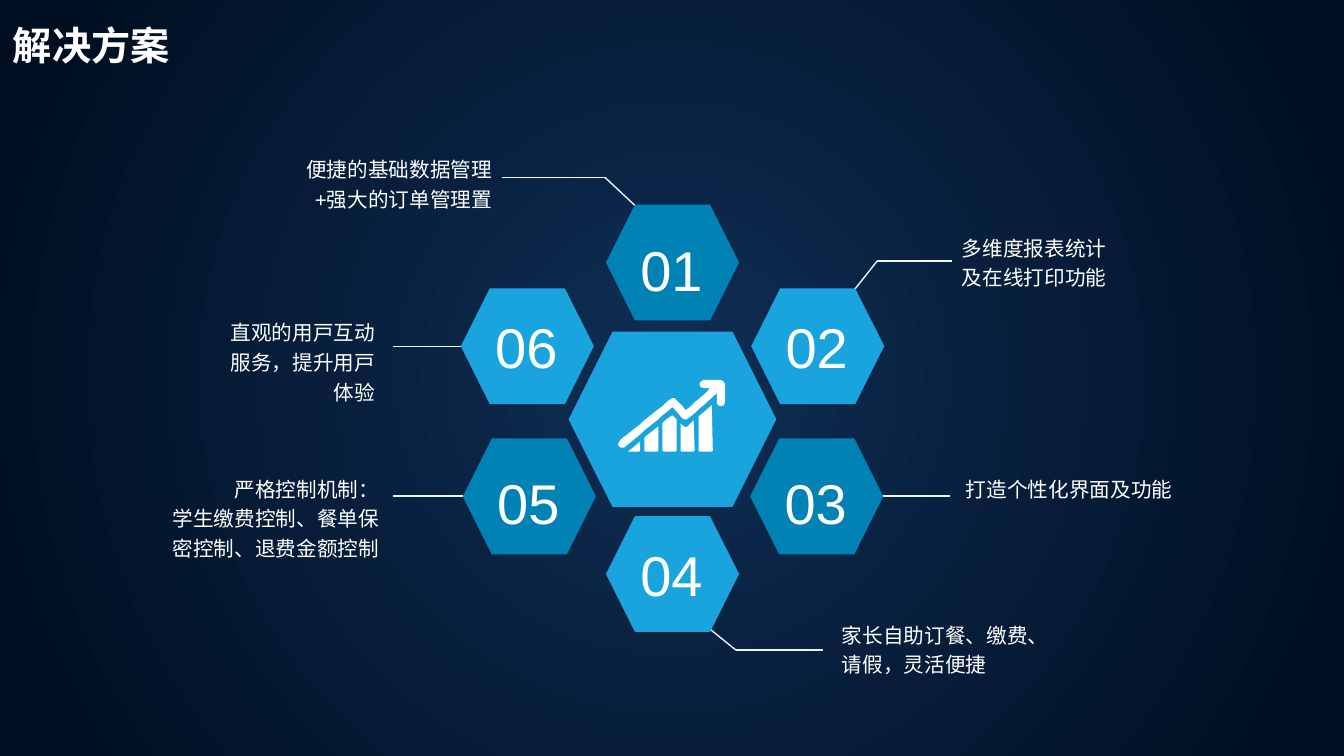
from dataclasses import dataclass
from itertools import pairwise

from lxml.etree import SubElement
from pptx import Presentation
from pptx.dml.color import RGBColor
from pptx.enum.shapes import MSO_CONNECTOR, MSO_SHAPE
from pptx.enum.text import MSO_AUTO_SIZE, PP_ALIGN
from pptx.oxml.ns import qn
from pptx.util import Inches, Pt

COLOURS = {
    "glow": "0F2E55",
    "night": "000E21",
    "light": "1AA4DE",
    "deep": "0082B4",
    "white": "FFFFFF",
    "leader": "F2F2F2",
}
FONT = "Arial"
HEXAGON_WIDTH, HEXAGON_HEIGHT = 1.32, 1.15
UNITS_PER_INCH = 100
BAR_WIDTH, BAR_BASE = 14, 448

Point = tuple[float, float]


@dataclass(frozen=True)
class Step:
    number: int
    left: float
    top: float
    leader: tuple[Point, ...]


@dataclass(frozen=True)
class Label:
    left: float
    top: float
    width: float
    height: float
    paragraphs: tuple[str, ...]
    align: PP_ALIGN = PP_ALIGN.LEFT
    size: float = 14.7
    spacing: float = 1.2
    bold: bool = False
    grows: bool = True


@dataclass(frozen=True)
class Bar:
    left: int
    top_edge: tuple[tuple[int, int], ...]


STEPS = (
    Step(1, 6.01, 2.03, ((6.31, 2.05), (6, 1.76), (4.98, 1.76))),
    Step(2, 7.45, 2.86, ((8.47, 2.88), (8.7, 2.59), (9.44, 2.59))),
    Step(3, 7.44, 4.35, ((8.75, 4.92), (9.42, 4.92))),
    Step(4, 6.01, 5.12, ((7.04, 6.24), (7.3, 6.45), (8.16, 6.45))),
    Step(5, 4.59, 4.35, ((4.59, 4.92), (3.9, 4.92))),
    Step(6, 4.57, 2.86, ((4.57, 3.44), (3.9, 3.44))),
)

LABELS = (
    Label(2.67, 1.46, 2.31, 0.69, ("便捷的基础数据管理+强大的订单管理置",), PP_ALIGN.RIGHT),
    Label(9.44, 2.24, 2.41, 0.69, ("多维度报表统计", "及在线打印功能")),
    Label(9.48, 4.63, 2.41, 0.4, ("打造个性化界面及功能",)),
    Label(8.25, 6.08, 2.13, 0.69, ("家长自助订餐、缴费、请假，灵活便捷",)),
    Label(1.5, 4.63, 2.36, 1.06,
          ("严格控制机制：", "学生缴费控制、餐单保密控制、退费金额控制"),
          PP_ALIGN.RIGHT, grows=False),
    Label(2.03, 3.08, 1.79, 0.99, ("直观的用戸互动服务，提升用戸体验",), PP_ALIGN.RIGHT),
    Label(0.03, 0.16, 2.63, 0.57, ("解决方案",), PP_ALIGN.JUSTIFY, 28, 1, True),
)

BARS = (
    Bar(639, ((639, 434), (653, 423))),
    Bar(657, ((657, 420), (661, 416), (667, 412), (671, 416))),
    Bar(675, ((675, 420), (677, 422), (680, 424), (682, 423), (688, 417))),
    Bar(693, ((693, 413), (698, 409), (706, 402))),
)
FIRST_WEDGE = ((635, 438), (623, 448), (634, 448), (635, 447))
TREND_ARROW = (
    (719, 381), (718, 379), (717, 378), (715, 377), (698, 377), (696, 378),
    (694, 380), (694, 382), (695, 384), (698, 385), (704, 385), (701, 389),
    (693, 396), (689, 399), (684, 404), (680, 407), (677, 403), (671, 397),
    (669, 395), (667, 395), (665, 396), (661, 399), (657, 403), (653, 406),
    (639, 417), (635, 421), (617, 435), (615, 437), (614, 439), (613, 441),
    (614, 443), (616, 444), (618, 444), (619, 444), (635, 431), (639, 427),
    (653, 416), (657, 412), (661, 409), (667, 404), (671, 408), (675, 413),
    (677, 415), (679, 416), (681, 416), (684, 414), (689, 410), (693, 406),
    (699, 401), (711, 390), (711, 399), (712, 402), (715, 403), (718, 402),
    (719, 399),
)


def colour(name: str) -> RGBColor:
    return RGBColor.from_string(COLOURS[name])


def paint(shape, fill: str) -> None:
    shape.shadow.inherit = False
    shape.fill.solid()
    shape.fill.fore_color.rgb = colour(fill)
    shape.line.fill.background()


def paint_background(slide) -> None:
    fill = slide.background.fill
    fill.gradient()
    for stop, name, position in zip(fill.gradient_stops, ("glow", "night"), (0, 0.94)):
        stop.color.rgb = colour(name)
        stop.position = position
    gradient = slide.element.xpath(".//a:gradFill")[0]
    gradient.remove(gradient.find(qn("a:lin")))
    circle = SubElement(gradient, qn("a:path"), {"path": "circle"})
    centre = {side: "50000" for side in ("l", "t", "r", "b")}
    SubElement(circle, qn("a:fillToRect"), centre)


def add_hexagon(slide, left: float, top: float, width: float, height: float, fill: str) -> None:
    hexagon = slide.shapes.add_shape(
        MSO_SHAPE.HEXAGON, Inches(left), Inches(top), Inches(width), Inches(height))
    paint(hexagon, fill)


def add_leader(slide, points: tuple[Point, ...]) -> None:
    for start, end in pairwise(points):
        segment = slide.shapes.add_connector(
            MSO_CONNECTOR.STRAIGHT, *(Inches(value) for value in start + end))
        segment.line.color.rgb = colour("leader")
        segment.line.width = Pt(1)
        SubElement(segment.element.spPr, qn("a:effectLst"))


def add_label(slide, label: Label) -> None:
    frame = slide.shapes.add_textbox(
        Inches(label.left), Inches(label.top), Inches(label.width), Inches(label.height)
    ).text_frame
    frame.word_wrap = True
    frame.auto_size = MSO_AUTO_SIZE.SHAPE_TO_FIT_TEXT if label.grows else MSO_AUTO_SIZE.NONE
    for index, words in enumerate(label.paragraphs):
        paragraph = frame.add_paragraph() if index else frame.paragraphs[0]
        paragraph.alignment = label.align
        paragraph.line_spacing = float(label.spacing)
        run = paragraph.add_run()
        run.text = words
        run.font.name = FONT
        run.font.size = Pt(label.size)
        run.font.bold = label.bold
        run.font.color.rgb = colour("white")


def add_step(slide, step: Step) -> None:
    odd = step.number % 2 == 1
    add_leader(slide, step.leader)
    add_hexagon(slide, step.left, step.top, HEXAGON_WIDTH, HEXAGON_HEIGHT,
                "deep" if odd else "light")
    add_label(slide, Label(
        step.left + 0.2, step.top + (0.12 if odd else 0.19), 0.9, 0.84 if odd else 0.77,
        (f"{step.number:02}",), PP_ALIGN.CENTER, 40, 1.2 if odd else 1))


def add_outline(slide, points: tuple[tuple[int, int], ...]) -> None:
    builder = slide.shapes.build_freeform(*points[0], scale=Inches(1) / UNITS_PER_INCH)
    builder.add_line_segments(points[1:], close=True)
    paint(builder.convert_to_shape(), "white")


def add_growth_icon(slide) -> None:
    add_outline(slide, FIRST_WEDGE)
    for bar in BARS:
        right = bar.left + BAR_WIDTH
        foot = ((right, BAR_BASE - 1), (right - 1, BAR_BASE),
                (bar.left + 1, BAR_BASE), (bar.left, BAR_BASE - 1))
        add_outline(slide, bar.top_edge + foot)
    add_outline(slide, TREND_ARROW)


def main() -> None:
    deck = Presentation()
    deck.slide_width, deck.slide_height = Inches(13.33), Inches(7.5)
    slide = deck.slides.add_slide(deck.slide_layouts[6])
    paint_background(slide)
    for step in STEPS:
        add_step(slide, step)
    add_hexagon(slide, 5.64, 3.29, 2.06, 1.74, "light")
    add_growth_icon(slide)
    for label in LABELS:
        add_label(slide, label)
    deck.save("out.pptx")


if __name__ == "__main__":
    main()
